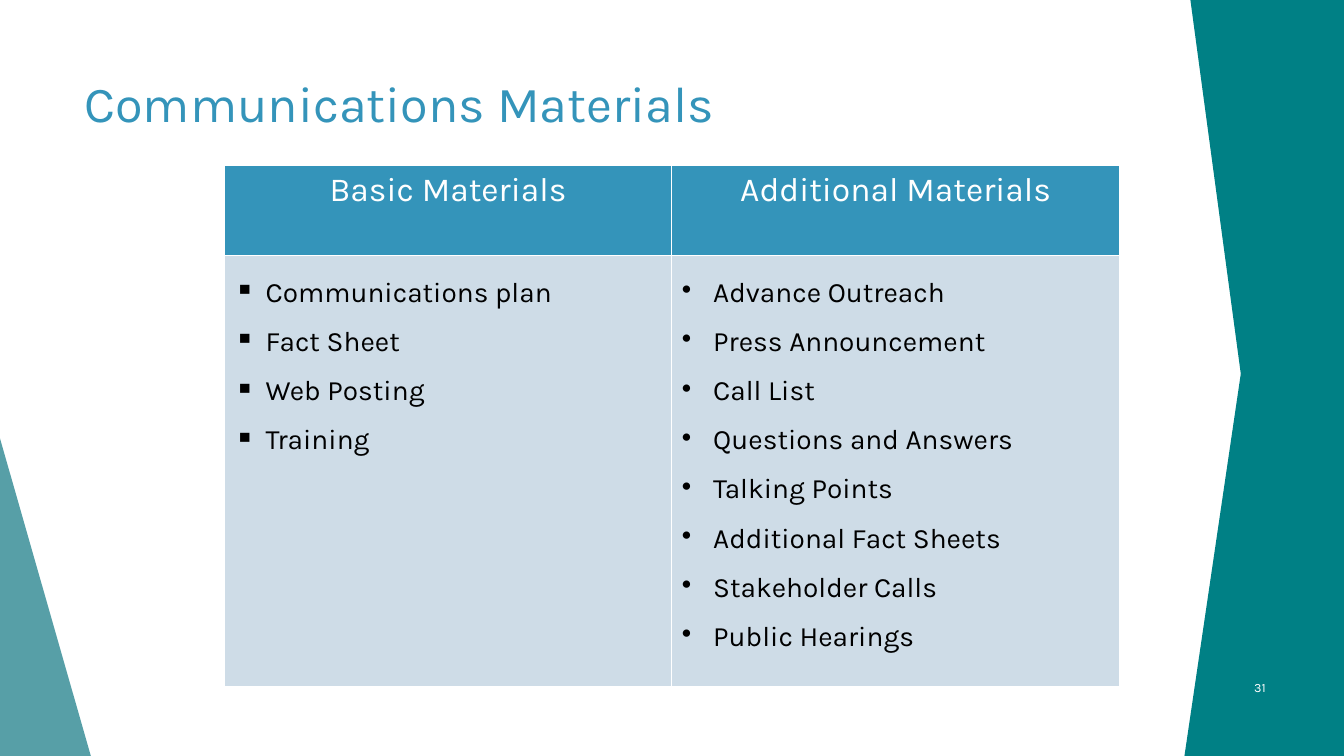
from lxml.etree import SubElement
from pptx import Presentation
from pptx.dml.color import RGBColor
from pptx.enum.shapes import MSO_SHAPE
from pptx.enum.text import MSO_ANCHOR, PP_ALIGN
from pptx.oxml.ns import qn
from pptx.util import Cm, Pt

FONT = "Karla"
COLORS = {
    "blue": "3494BA",
    "teal": "008085",
    "sea": "3A8F98",
    "pale": "CEDCE7",
    "white": "FFFFFF",
    "black": "000000",
}
WIDTH, HEIGHT = 33.87, 19.05
COLUMNS = [
    ("Basic Materials", "▪",
     ["Communications plan", "Fact Sheet", "Web Posting", "Training"]),
    ("Additional Materials", "•",
     ["Advance Outreach", "Press Announcement", "Call List", "Questions and Answers",
      "Talking Points", "Additional Fact Sheets", "Stakeholder Calls", "Public Hearings"]),
]


class SlideBuilder:
    """Holds the style and the current slide; lengths are in centimetres."""

    def __init__(self, slide):
        self.slide = slide

    def color(self, name):
        return RGBColor.from_string(COLORS[name])

    def paint(self, shape, color, opacity=100):
        shape.shadow.inherit = False
        shape.fill.solid()
        shape.fill.fore_color.rgb = self.color(color)
        shape.line.fill.background()
        if opacity < 100:
            fill_color = shape._element.spPr.find(qn("a:solidFill"))[0]
            SubElement(fill_color, qn("a:alpha"), val=str(opacity * 1000))

    def preset(self, kind, left, top, width, height, color, opacity=100):
        shape = self.slide.shapes.add_shape(kind, Cm(left), Cm(top), Cm(width), Cm(height))
        self.paint(shape, color, opacity)

    def outline(self, points, color):
        start, *rest = [(Cm(x), Cm(y)) for x, y in points]
        builder = self.slide.shapes.build_freeform(*start)
        builder.add_line_segments(rest, close=True)
        self.paint(builder.convert_to_shape(), color)

    def add_text_run(self, paragraph, text, size, color, align=PP_ALIGN.LEFT):
        paragraph.alignment = align
        run = paragraph.add_run()
        run.text = text
        run.font.name = FONT
        run.font.size = Pt(size)
        run.font.bold = False
        run.font.color.rgb = self.color(color)

    def text(self, left, top, width, height, text, size, color,
             align=PP_ALIGN.LEFT, anchor=MSO_ANCHOR.TOP):
        box = self.slide.shapes.add_textbox(Cm(left), Cm(top), Cm(width), Cm(height))
        box.text_frame.word_wrap = True
        box.text_frame.vertical_anchor = anchor
        self.add_text_run(box.text_frame.paragraphs[0], text, size, color, align)

    def style_cell(self, cell, fill):
        """Give a cell thin white borders and a solid fill."""
        properties = cell._tc.get_or_add_tcPr()
        for side in ("a:lnL", "a:lnR", "a:lnT", "a:lnB"):
            line = SubElement(properties, qn(side), w=str(Pt(1)))
            SubElement(SubElement(line, qn("a:solidFill")), qn("a:srgbClr"), val=COLORS["white"])
        cell.fill.solid()
        cell.fill.fore_color.rgb = self.color(fill)

    def bullet_list(self, text_frame, items, bullet):
        for index, item in enumerate(items):
            paragraph = text_frame.add_paragraph() if index else text_frame.paragraphs[0]
            properties = paragraph._p.get_or_add_pPr()
            properties.set("marL", str(Cm(0.79)))
            properties.set("indent", str(-Cm(0.79)))
            SubElement(properties, qn("a:buChar"), char=bullet)
            paragraph.line_spacing = 1.5
            self.add_text_run(paragraph, item, 20, "black")

    def table(self, left, top, column_width, row_heights, columns):
        frame = self.slide.shapes.add_table(
            len(row_heights), len(columns), Cm(left), Cm(top),
            Cm(column_width * len(columns)), Cm(sum(row_heights)))
        table = frame.table
        table.horz_banding = False
        for row, height in zip(table.rows, row_heights):
            row.height = Cm(height)
        for index, (heading, bullet, items) in enumerate(columns):
            table.columns[index].width = Cm(column_width)
            header, body = table.cell(0, index), table.cell(1, index)
            self.style_cell(header, "blue")
            self.add_text_run(
                header.text_frame.paragraphs[0], heading, 24, "white", PP_ALIGN.CENTER)
            self.style_cell(body, "pale")
            self.bullet_list(body.text_frame, items, bullet)


def main():
    presentation = Presentation()
    presentation.slide_width, presentation.slide_height = Cm(WIDTH), Cm(HEIGHT)
    builder = SlideBuilder(presentation.slides.add_slide(presentation.slide_layouts[6]))

    builder.preset(MSO_SHAPE.RIGHT_TRIANGLE, -0.05, 10.87, 2.34, 8.18, "sea", opacity=85)
    builder.outline(
        [(WIDTH, 0), (WIDTH, HEIGHT), (29.85, HEIGHT), (31.27, 9.42), (30, 0)], "teal")
    builder.text(1.88, 1.7, 30.28, 3.66, "Communications Materials", 36, "blue")
    builder.table(5.65, 4.17, 11.28, [2.26, 10.87], COLUMNS)
    builder.text(30.25, 16.81, 1.9, 1.02, "31", 9, "white", PP_ALIGN.RIGHT, MSO_ANCHOR.MIDDLE)

    presentation.save("out.pptx")


if __name__ == "__main__":
    main()
